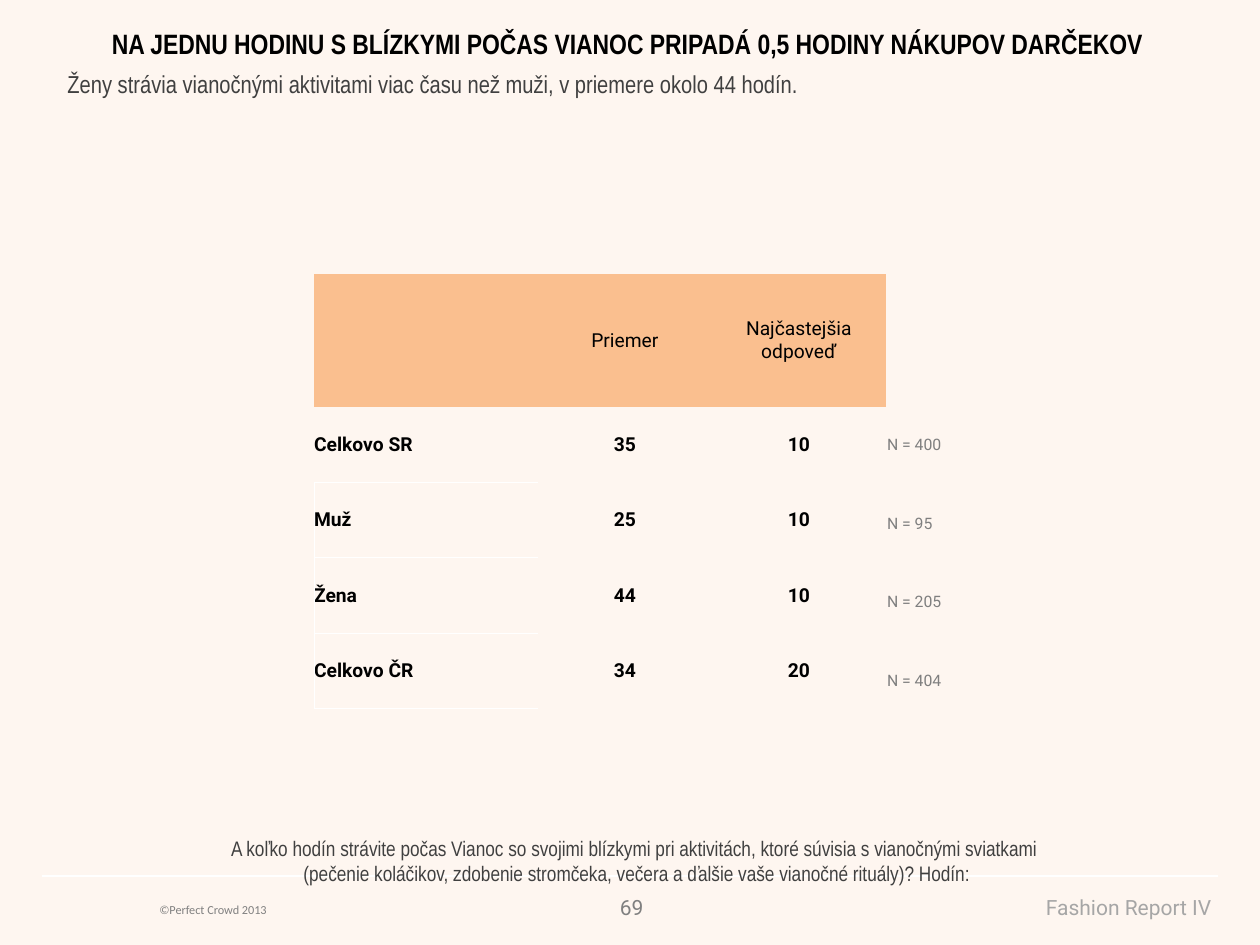
from lxml import etree
from pptx import Presentation
from pptx import util as u
from pptx.dml.color import RGBColor
from pptx.enum import shapes, text
from pptx.oxml import ns

PX = 914400 / 126

CREAM = RGBColor(0xFE, 0xF6, 0xF0)
PEACH = RGBColor(0xFA, 0xBF, 0x8F)
WHITE = RGBColor(0xFF, 0xFF, 0xFF)
BLACK = RGBColor(0x00, 0x00, 0x00)
DARK = RGBColor(0x40, 0x40, 0x40)
MID = RGBColor(0x80, 0x80, 0x80)
SOFT = RGBColor(0x7F, 0x7F, 0x7F)
LIGHT = RGBColor(0xA6, 0xA6, 0xA6)

NARROW, ROBOTO, CALIBRI = "Arial Narrow", "Roboto", "Calibri"
LEFT, CENTER, RIGHT = text.PP_ALIGN.LEFT, text.PP_ALIGN.CENTER, text.PP_ALIGN.RIGHT
PLAIN_TABLE = "{2D5ABB26-0587-4C30-8999-92F81FD0307C}"


def px(value):
    return u.Emu(round(value * PX))


def write(frame, lines, font=ROBOTO, size=11, color=BLACK, bold=False, align=LEFT):
    """Fill a text frame, one paragraph for each line."""
    frame.word_wrap = True
    for i, line in enumerate(lines.split("\n")):
        paragraph = frame.add_paragraph() if i else frame.paragraphs[0]
        paragraph.alignment = align
        run = paragraph.add_run()
        run.text = line
        run.font.name, run.font.size, run.font.bold = font, u.Pt(size), bold
        run.font.color.rgb = color


def set_borders(cell, sides, color=WHITE, width=0.5):
    """Draw the named sides of a cell, given in the order L, R, T, B."""
    props = cell._tc.get_or_add_tcPr()
    for side in sides:
        line = etree.SubElement(props, ns.qn(f"a:ln{side}"), w=str(u.Pt(width)))
        fill = etree.SubElement(line, ns.qn("a:solidFill"))
        etree.SubElement(fill, ns.qn("a:srgbClr"), val=str(color))


class ReportSlide:
    def __init__(self, deck):
        self.slide = deck.slides.add_slide(deck.slide_layouts[6])
        self.slide.background.fill.solid()
        self.slide.background.fill.fore_color.rgb = CREAM

    def rule(self, x1, x2, y):
        line = self.slide.shapes.add_connector(
            shapes.MSO_CONNECTOR.STRAIGHT, px(x1), px(y), px(x2), px(y))
        line.line.color.rgb = WHITE
        line.line.width = u.Pt(0.75)
        etree.SubElement(line._element.spPr, ns.qn("a:effectLst"))

    def label(self, x, y, w, h, lines, **style):
        box = self.slide.shapes.add_textbox(px(x), px(y), px(w), px(h))
        write(box.text_frame, lines, **style)

    def table(self, x, y, widths, heights, rows):
        frame = self.slide.shapes.add_table(
            len(rows), len(widths), px(x), px(y), px(sum(widths)), px(sum(heights)))
        table = frame.table
        table.first_row = table.horz_banding = False
        table._tbl.tblPr.find(ns.qn("a:tableStyleId")).text = PLAIN_TABLE
        for column, width in zip(table.columns, widths):
            column.width = px(width)
        for row, height in zip(table.rows, heights):
            row.height = px(height)
        return table

    def cell(self, cell, content, fill=None, borders="", **style):
        cell.margin_left = cell.margin_right = cell.margin_top = cell.margin_bottom = 0
        cell.vertical_anchor = text.MSO_ANCHOR.MIDDLE
        set_borders(cell, borders)
        if fill is None:
            cell.fill.background()
        else:
            cell.fill.solid()
            cell.fill.fore_color.rgb = fill
        if content:
            write(cell.text_frame, content, **style)


def main():
    deck = Presentation()
    deck.slide_width, deck.slide_height = px(1260), px(945)
    page = ReportSlide(deck)

    # Footer
    page.rule(42, 1218, 876)
    page.label(147, 896, 367, 28, "©Perfect Crowd 2013", font=CALIBRI, size=7, color=MID)
    page.label(757, 888, 467, 38, "Fashion Report IV", size=12, color=LIGHT, align=RIGHT)
    page.label(604, 888, 52, 38, "69", size=12, color=MID, align=RIGHT)

    # Survey question
    page.label(44, 829, 1186, 63,
               "A koľko hodín strávite počas Vianoc so svojimi blízkymi pri aktivitách, "
               "ktoré súvisia s vianočnými sviatkami \n"
               "(pečenie koláčikov, zdobenie stromčeka, večera a ďalšie vaše vianočné "
               "rituály)? Hodín:",
               font=NARROW, size=12, color=DARK, align=CENTER)

    # Headline and summary
    page.label(70, 20, 1115, 47,
               "NA JEDNU HODINU S BLÍZKYMI POČAS VIANOC PRIPADÁ 0,5 HODINY NÁKUPOV DARČEKOV",
               font=NARROW, size=16, bold=True, align=CENTER)
    page.label(55, 63, 1205, 55,
               "Ženy strávia vianočnými aktivitami viac času než muži, v priemere okolo 44 hodín.",
               font=NARROW, size=14, color=DARK)

    # Hours by group
    hours = [
        ("", "Priemer", "Najčastejšia odpoveď"),
        ("Celkovo SR", "35", "10"),
        ("Muž", "25", "10"),
        ("Žena", "44", "10"),
        ("Celkovo ČR", "34", "20"),
    ]
    hours_table = page.table(314, 274, [224, 174, 174], [133] + [302 / 4] * 4, hours)
    for r, row in enumerate(hours):
        for c, value in enumerate(row):
            borders = ""
            if c == 0 and r > 0:
                borders = "B" if r == 1 else "LTB"
            page.cell(hours_table.cell(r, c), value, fill=None if r else PEACH,
                      borders=borders, bold=r > 0, align=CENTER if c else LEFT)

    # Sample sizes
    samples = [400, 95, 205, 404]
    sample_table = page.table(887, 406, [86], [314 / 4] * 4, samples)
    for r, count in enumerate(samples):
        page.cell(sample_table.cell(r, 0), f"N = {count}", size=9, color=SOFT)

    deck.save("out.pptx")


if __name__ == "__main__":
    main()
